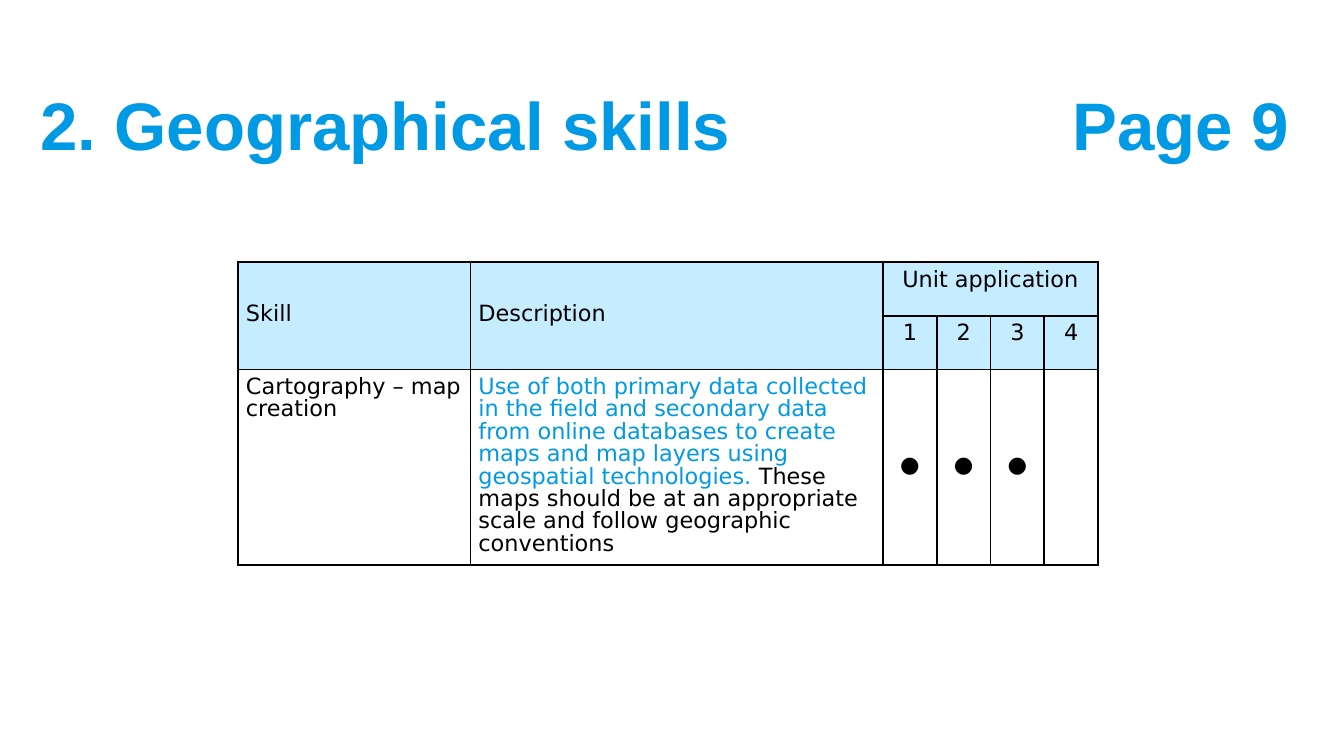
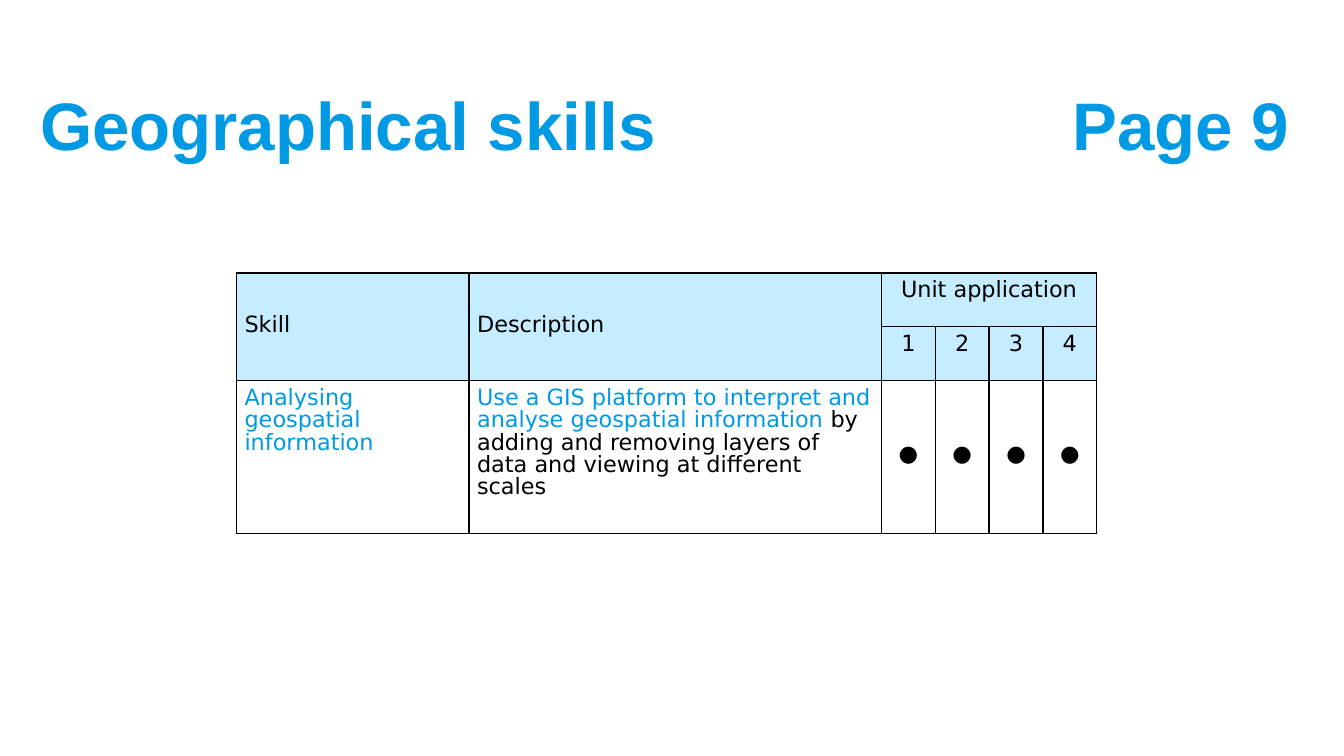
from lxml import etree
from pptx import Presentation
from pptx.dml.color import RGBColor
from pptx.enum import text
from pptx.oxml.ns import qn
from pptx.util import Inches, Pt

COLORS = {"blue": "0099E3", "header": "C6ECFF", "black": "000000", "white": "FFFFFF"}
COLUMNS = [1.73, 3.07] + [0.4] * 4
ROWS = [0.4, 0.4, 1.14]
MIDDLE, TOP = text.MSO_ANCHOR.MIDDLE, text.MSO_ANCHOR.TOP
CENTER = text.PP_ALIGN.CENTER

SLIDES = [
    {
        "title": "2. Geographical skills",
        "at": (1.77, 1.95),
        "skill": [("Cartography – map creation", "black")],
        "description": [
            ("Use of both primary data collected in the field and secondary data from online "
             "databases to create maps and map layers using geospatial technologies. ", "blue"),
            ("These maps should be at an appropriate scale and follow geographic conventions",
             "black"),
        ],
        "units": [1, 2, 3],
    },
    {
        "title": "Geographical skills",
        "at": (1.76, 2.03),
        "skill": [("Analysing geospatial information", "blue")],
        "description": [
            ("Use a GIS platform to interpret and analyse geospatial information ", "blue"),
            ("by adding and removing layers of data and viewing at different scales", "black"),
        ],
        "units": [1, 2, 3, 4],
    },
]


def add_heading(s, words, left, top, width, height, anchor):
    tf = s.shapes.add_textbox(*map(Inches, (left, top, width, height))).text_frame
    tf.word_wrap = True
    tf.vertical_anchor = anchor
    tf.text = words
    font = tf.paragraphs[0].runs[0].font
    font.name, font.size, font.bold = "Arial", Pt(36), True
    font.color.rgb = RGBColor.from_string(COLORS["blue"])


def write_cell(cell, runs, anchor=TOP, align=None, line=12, gap=2):
    """Fill a table cell with (words, colour name) runs."""
    cell.vertical_anchor = anchor
    p = cell.text_frame.paragraphs[0]
    p.alignment = align
    p.line_spacing = Pt(line)
    p.space_before = p.space_after = Pt(gap)
    p.font.size = Pt(12)
    for words, color in runs:
        r = p.add_run()
        r.text = words
        r.font.name, r.font.size = "DejaVu Sans", Pt(12)
        r.font.color.rgb = RGBColor.from_string(COLORS[color])


prs = Presentation()
prs.slide_width = Inches(10)
prs.slide_height = prs.slide_width * 9 // 16

for content in SLIDES:
    s = prs.slides.add_slide(prs.slide_layouts[6])
    s.background.fill.solid()
    s.background.fill.fore_color.rgb = RGBColor.from_string(COLORS["white"])
    add_heading(s, content["title"], 0.2, 0.45, 9.53, 0.94, MIDDLE)

    left, top = content["at"]
    table = s.shapes.add_table(len(ROWS), len(COLUMNS), Inches(left), Inches(top),
                               Inches(sum(COLUMNS)), Inches(sum(ROWS))).table
    for column, width in zip(table.columns, COLUMNS):
        column.width = Inches(width)
    for row, height in zip(table.rows, ROWS):
        row.height = Inches(height)

    for i, row in enumerate(table.rows):
        for cell in row.cells:
            cell.margin_left = cell.margin_right = Inches(0.06)
            cell.margin_top = cell.margin_bottom = Inches(0.06)
            tcPr = cell._tc.get_or_add_tcPr()
            for side in ("a:lnL", "a:lnR", "a:lnT", "a:lnB"):
                ln = etree.SubElement(tcPr, qn(side), w=str(Pt(1)))
                fill = etree.SubElement(ln, qn("a:solidFill"))
                etree.SubElement(fill, qn("a:srgbClr"), val=COLORS["black"])
            if i < 2:
                cell.fill.solid()
                cell.fill.fore_color.rgb = RGBColor.from_string(COLORS["header"])
            else:
                cell.fill.background()

    for col, label in enumerate(["Skill", "Description"]):
        table.cell(0, col).merge(table.cell(1, col))
        write_cell(table.cell(0, col), [(label, "black")], MIDDLE, gap=4)
    table.cell(0, 2).merge(table.cell(0, 5))
    write_cell(table.cell(0, 2), [("Unit application", "black")], align=CENTER)

    write_cell(table.cell(2, 0), content["skill"])
    write_cell(table.cell(2, 1), content["description"])
    for unit in range(1, 5):
        write_cell(table.cell(1, unit + 1), [(str(unit), "black")], align=CENTER)
        dot = [("●", "black")] if unit in content["units"] else []
        write_cell(table.cell(2, unit + 1), dot, MIDDLE, CENTER, line=11)

    add_heading(s, "Page 9", 7.88, 0.57, 1.92, 0.71, TOP)

prs.save("out.pptx")
